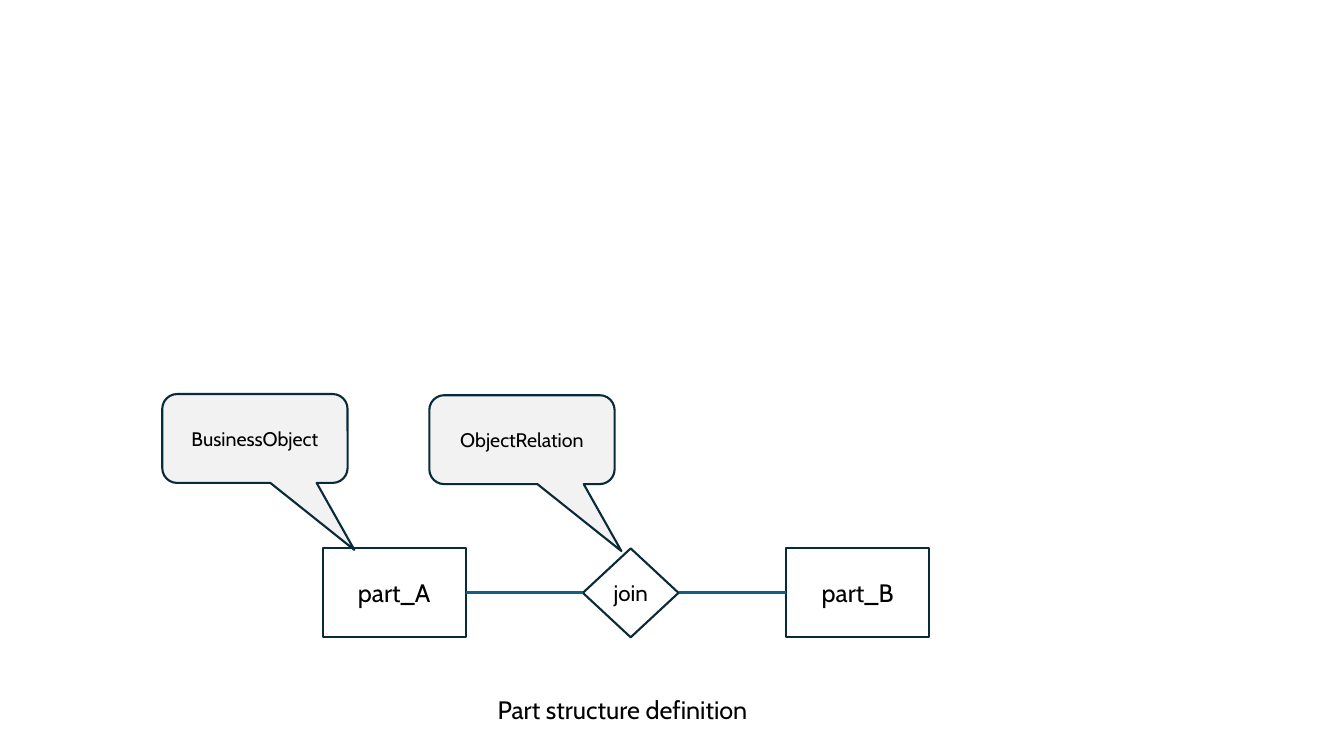
from lxml import etree
from pptx import Presentation
from pptx.dml.color import RGBColor
from pptx.enum.shapes import MSO_CONNECTOR, MSO_SHAPE
from pptx.enum.text import MSO_ANCHOR, MSO_AUTO_SIZE, PP_ALIGN
from pptx.oxml.ns import qn
from pptx.util import Cm, Pt

RECTANGLE, DIAMOND = MSO_SHAPE.RECTANGLE, MSO_SHAPE.DIAMOND
CALLOUT = MSO_SHAPE.ROUNDED_RECTANGULAR_CALLOUT
STRAIGHT = MSO_CONNECTOR.STRAIGHT
MIDDLE, TOP = MSO_ANCHOR.MIDDLE, MSO_ANCHOR.TOP
CENTER, LEFT = PP_ALIGN.CENTER, PP_ALIGN.LEFT
FIT_SHAPE = MSO_AUTO_SIZE.SHAPE_TO_FIT_TEXT
LEFT_SIDE, RIGHT_SIDE = 1, 3

WHITE = RGBColor(0xFF, 0xFF, 0xFF)
BLACK = RGBColor(0x00, 0x00, 0x00)
NAVY = RGBColor(0x09, 0x2A, 0x39)
TEAL = RGBColor(0x15, 0x60, 0x82)
PALE_GREY = RGBColor(0xF2, 0xF2, 0xF2)
FONT = "Cabin"

NODE_HEIGHT = 2.24
PART_WIDTH = 3.61
JOIN_WIDTH = 2.41
CALLOUT_WIDTH = 4.67
CALLOUT_POINTER = (0.537, 1.254, 0.167)


def write_text(holder, text, size=18, align=CENTER, anchor=MIDDLE, wrap=True):
    frame = holder.text_frame
    frame.word_wrap = wrap
    frame.vertical_anchor = anchor
    paragraph = frame.paragraphs[0]
    paragraph.alignment = align
    run = paragraph.add_run()
    run.text = text
    run.font.name = FONT
    run.font.size = Pt(size)
    run.font.color.rgb = BLACK


def add_node(slide, kind, box, text, size=18, fill=WHITE):
    """Add an outlined shape with a centred label; box is in centimetres."""
    node = slide.shapes.add_shape(kind, *map(Cm, box))
    node.shadow.inherit = False
    node.fill.solid()
    node.fill.fore_color.rgb = fill
    node.line.color.rgb = NAVY
    node.line.width = Pt(1.5)
    write_text(node, text, size=size)
    return node


def link(slide, start, start_side, end, end_side):
    connector = slide.shapes.add_connector(STRAIGHT, 0, 0, 0, 0)
    connector.begin_connect(start, start_side)
    connector.end_connect(end, end_side)
    connector.line.color.rgb = TEAL
    connector.line.width = Pt(2)
    etree.SubElement(connector._element.spPr, qn("a:effectLst"))


def add_relation(slide, left, top, width):
    """Two parts at the ends of the row, linked through a join diamond."""
    part_a = add_node(slide, RECTANGLE, (left, top, PART_WIDTH, NODE_HEIGHT), "part_A")
    part_b = add_node(slide, RECTANGLE,
                      (left + width - PART_WIDTH, top, PART_WIDTH, NODE_HEIGHT), "part_B")
    join_left = left + (width - JOIN_WIDTH) / 2 + 0.12
    join = add_node(slide, DIAMOND, (join_left, top, JOIN_WIDTH, NODE_HEIGHT),
                    "join", size=16)
    join.text_frame.margin_left = join.text_frame.margin_right = 0
    link(slide, join, LEFT_SIDE, part_a, RIGHT_SIDE)
    link(slide, part_b, LEFT_SIDE, join, RIGHT_SIDE)


def add_caption(slide, left, top, width, height):
    caption = slide.shapes.add_textbox(Cm(left), Cm(top), Cm(width), Cm(height))
    write_text(caption, "Part structure definition", align=LEFT, anchor=TOP, wrap=False)
    caption.text_frame.auto_size = FIT_SHAPE


def add_callout(slide, left, top, text):
    callout = add_node(slide, CALLOUT, (left, top, CALLOUT_WIDTH, NODE_HEIGHT),
                       text, size=14, fill=PALE_GREY)
    for index, value in enumerate(CALLOUT_POINTER):
        callout.adjustments[index] = value


def main():
    deck = Presentation()
    deck.slide_width, deck.slide_height = Cm(33.87), Cm(19.05)
    slide = deck.slides.add_slide(deck.slide_layouts[6])
    add_relation(slide, 8.13, 13.82, 15.29)
    add_caption(slide, 12.29, 17.37, 7.04, 1.02)
    add_callout(slide, 4.09, 9.93, "BusinessObject")
    add_callout(slide, 10.82, 9.96, "ObjectRelation")
    deck.save("out.pptx")


if __name__ == "__main__":
    main()
